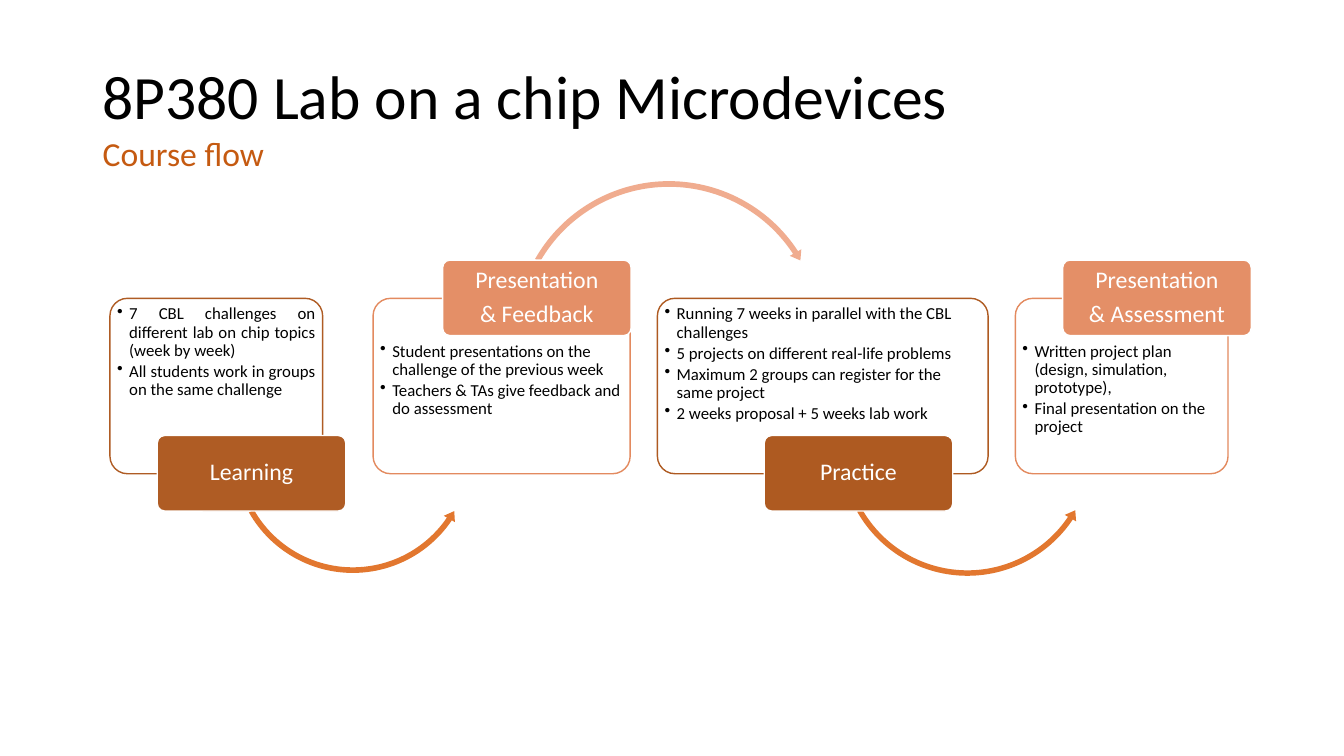
from pptx import Presentation
from pptx.dml.color import RGBColor
from pptx.enum.shapes import MSO_SHAPE
from pptx.enum.text import MSO_ANCHOR, PP_ALIGN
from pptx.oxml.ns import qn
from pptx.util import Pt
from lxml.etree import SubElement

EMU_PER_PX = 9144
FONT = "Calibri"
BLACK = RGBColor(0x00, 0x00, 0x00)
WHITE = RGBColor(0xFF, 0xFF, 0xFF)
RUST = RGBColor(0xC5, 0x5A, 0x11)
BROWN = RGBColor(0xAF, 0x5C, 0x24)
DARK_BROWN = RGBColor(0xAE, 0x5A, 0x21)
SALMON = RGBColor(0xE3, 0x8A, 0x5F)
LIGHT_SALMON = RGBColor(0xE4, 0x8F, 0x67)
ORANGE = RGBColor(0xE2, 0x77, 0x2F)
PEACH = RGBColor(0xF0, 0xAC, 0x8F)

FRAME_TOP, FRAME_HEIGHT = 296, 174
LABEL_WIDTH, LABEL_HEIGHT = 187, 75
UPPER_LABEL_TOP, LOWER_LABEL_TOP = 258, 432

LEFT_ARROW = MSO_SHAPE.LEFT_CIRCULAR_ARROW
RIGHT_ARROW = MSO_SHAPE.CIRCULAR_ARROW

STAGES = [
    dict(left=109, width=211, line=BROWN, label_left=156, label_fill=BROWN,
         upper=False, label=["Learning"], align=PP_ALIGN.JUSTIFY,
         points=["7 CBL challenges on different lab on chip topics (week by week)",
                 "All students work in groups on the same challenge"],
         arrow=(LEFT_ARROW, 228, 328, 244, ORANGE,
                (0.023, 2.725, 20.48, 90.245, 0.026))),
    dict(left=370, width=255, line=SALMON, label_left=439, label_fill=LIGHT_SALMON,
         upper=True, label=["Presentation", "& Feedback"], align=PP_ALIGN.LEFT,
         points=["Student presentations on the challenge of the previous week",
                 "Teachers & TAs give feedback and do assessment"],
         arrow=(RIGHT_ARROW, 507, 176, 313, PEACH,
                (0.018, 2.099, 196.146, 125.755, 0.021))),
    dict(left=652, width=328, line=DARK_BROWN, label_left=758, label_fill=DARK_BROWN,
         upper=False, label=["Practice"], align=PP_ALIGN.LEFT,
         points=["Running 7 weeks in parallel with the CBL challenges",
                 "5 projects on different real-life problems",
                 "Maximum 2 groups can register for the same project",
                 "2 weeks proposal + 5 weeks lab work"],
         arrow=(LEFT_ARROW, 830, 316, 259, ORANGE,
                (0.021, 2.557, 20.312, 90.245, 0.025))),
    dict(left=1007, width=211, line=SALMON, label_left=1054, label_fill=LIGHT_SALMON,
         upper=True, label=["Presentation", "& Assessment"], align=PP_ALIGN.LEFT,
         points=["Written project plan (design, simulation, prototype),",
                 "Final presentation on the project"],
         arrow=None),
]


def px(length):
    return length * EMU_PER_PX


class FlowSlide:
    def __init__(self, presentation):
        self.slide = presentation.slides.add_slide(presentation.slide_layouts[6])

    def set_text(self, shape, lines, size, color, align, anchor, insets, space_after=0):
        text_frame = shape.text_frame
        text_frame.word_wrap = True
        text_frame.vertical_anchor = anchor
        (text_frame.margin_left, text_frame.margin_top,
         text_frame.margin_right, text_frame.margin_bottom) = map(px, insets)
        text_frame.text = "\n".join(lines)
        for paragraph in text_frame.paragraphs:
            paragraph.alignment = align
            paragraph.line_spacing = 0.9
            paragraph.space_after = Pt(space_after)
            font = paragraph.runs[0].font
            font.name, font.size = FONT, Pt(size)
            font.color.rgb = color

    def heading(self, left, top, width, height, text, size, color):
        shape = self.slide.shapes.add_textbox(px(left), px(top), px(width), px(height))
        self.set_text(shape, [text], size, color, PP_ALIGN.LEFT, MSO_ANCHOR.MIDDLE,
                      (10, 5, 10, 5))

    def shape(self, kind, left, top, width, height, fill, line, adjustments):
        shape = self.slide.shapes.add_shape(kind, px(left), px(top), px(width), px(height))
        shape.shadow.inherit = False
        for index, value in enumerate(adjustments):
            shape.adjustments[index] = value
        shape.fill.solid()
        shape.fill.fore_color.rgb = fill
        if line is None:
            shape.line.fill.background()
        else:
            shape.line.color.rgb = line
            shape.line.width = Pt(1)
        return shape

    def frame(self, left, width, line, points, align, text_top):
        shape = self.shape(MSO_SHAPE.ROUNDED_RECTANGLE, left, FRAME_TOP, width,
                           FRAME_HEIGHT, WHITE, line, [0.1])
        self.set_text(shape, points, 12, BLACK, align, MSO_ANCHOR.TOP,
                      (2, text_top, 2, 2), 2)
        for paragraph in shape.text_frame.paragraphs:
            properties = paragraph._p.get_or_add_pPr()
            properties.set("marL", str(px(12)))
            properties.set("indent", str(px(-12)))
            SubElement(properties, qn("a:buChar")).set("char", "•")

    def label(self, left, top, fill, lines):
        shape = self.shape(MSO_SHAPE.ROUNDED_RECTANGLE, left, top, LABEL_WIDTH,
                           LABEL_HEIGHT, fill, WHITE, [0.1])
        self.set_text(shape, lines, 17, WHITE, PP_ALIGN.CENTER, MSO_ANCHOR.MIDDLE,
                      (4, 2, 4, 2), 6)

    def arrow(self, kind, left, top, diameter, fill, adjustments):
        self.shape(kind, left, top, diameter, diameter, fill, None, adjustments)

    def stage(self, left, width, line, label_left, label_fill, upper, label, align,
              points, arrow):
        self.frame(left, width, line, points, align, 39 if upper else 2)
        if arrow:
            self.arrow(*arrow)
        self.label(label_left, UPPER_LABEL_TOP if upper else LOWER_LABEL_TOP,
                   label_fill, label)


def main():
    presentation = Presentation()
    presentation.slide_width = px(1333)
    presentation.slide_height = px(750)
    flow = FlowSlide(presentation)
    for stage in STAGES:
        flow.stage(**stage)
    flow.heading(92, 26, 1150, 145, "8P380 Lab on a chip Microdevices", 44, BLACK)
    flow.heading(92, 82, 967, 145, "Course flow", 24, RUST)
    presentation.save("out.pptx")


if __name__ == "__main__":
    main()
